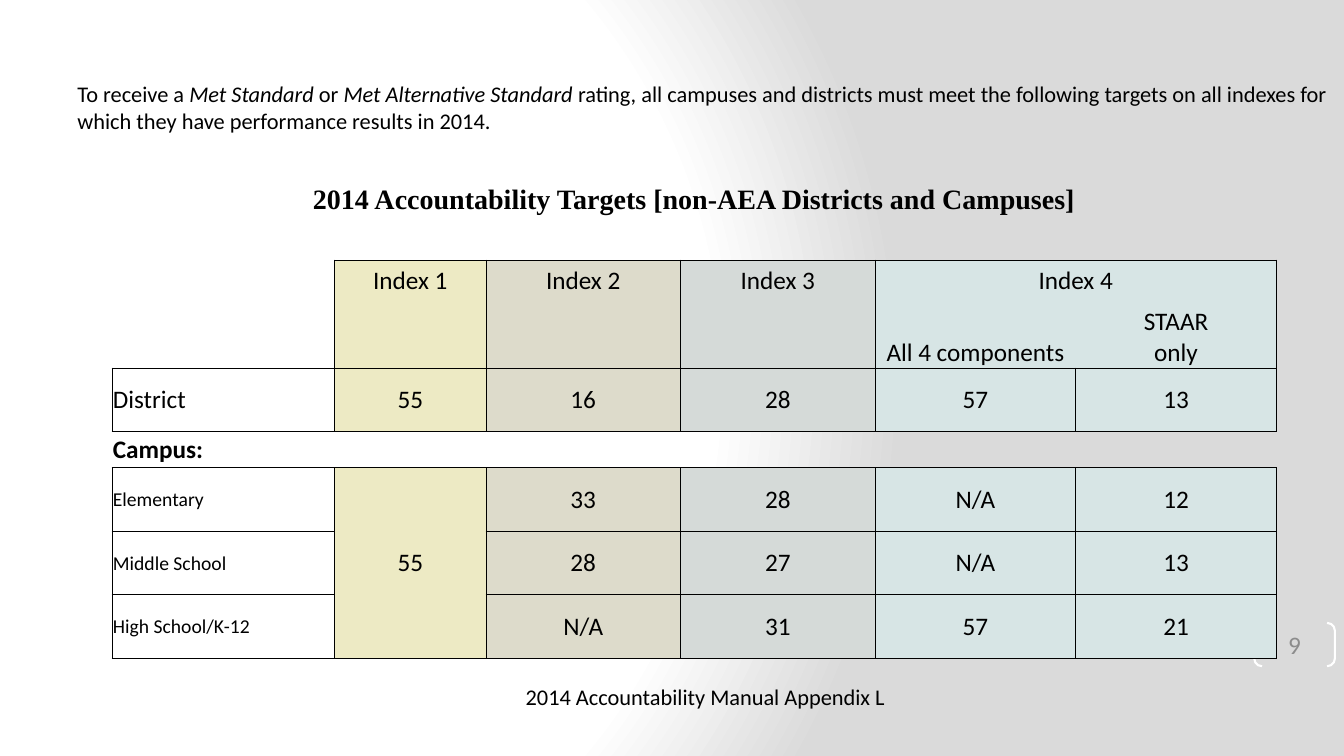
import pptx
import pptx.util
import pptx.oxml
import pptx.oxml.ns
import pptx.dml.color
import pptx.enum.text
import pptx.enum.shapes

Inches = pptx.util.Inches
RGBColor = pptx.dml.color.RGBColor
Align = pptx.enum.text.PP_ALIGN
Anchor = pptx.enum.text.MSO_ANCHOR

BLACK = RGBColor(0, 0, 0)
WHITE = RGBColor(255, 255, 255)
NUMBER_GRAY = RGBColor(0x8C, 0x8C, 0x8C)
SAND = RGBColor(0xED, 0xEA, 0xC4)
STONE = RGBColor(0xDD, 0xDB, 0xCB)
SILVER = RGBColor(0xD5, 0xDA, 0xD8)
MIST = RGBColor(0xD7, 0xE5, 0xE5)
COLUMN_FILLS = [None, SAND, STONE, SILVER, MIST, MIST]
DRAWING = pptx.oxml.ns.nsdecls("a")


def add_span(para, text, size=18, color=BLACK, **formats):
    span = para.add_run()
    span.text = text
    span.font.size = pptx.util.Pt(size)
    span.font.color.rgb = color
    for name, value in {"name": "Calibri", "bold": False, **formats}.items():
        setattr(span.font, name, value)


def add_border(cell, side, visible):
    paint = f'<a:solidFill><a:srgbClr val="{BLACK}"/></a:solidFill>' if visible else "<a:noFill/>"
    width = pptx.util.Pt(0.5)
    line = pptx.oxml.parse_xml(f'<a:ln{side} {DRAWING} w="{width}">{paint}</a:ln{side}>')
    cell._tc.get_or_add_tcPr().append(line)


deck = pptx.Presentation()
deck.slide_width = Inches(13.33)
deck.slide_height = Inches(7.5)
page = deck.slides.add_slide(deck.slide_layouts[6])

page.background.fill.solid()
background = page.element.find(".//" + pptx.oxml.ns.qn("p:bgPr"))
background.replace(background[0], pptx.oxml.parse_xml(f"""
<a:gradFill {DRAWING} rotWithShape="1"><a:gsLst>
<a:gs pos="0"><a:srgbClr val="FFFFFF"/></a:gs>
<a:gs pos="75000"><a:srgbClr val="FFFFFF"/></a:gs>
<a:gs pos="100000"><a:srgbClr val="DADADA"/></a:gs>
</a:gsLst><a:path path="circle">
<a:fillToRect l="20000" t="50000" r="100000" b="50000"/>
</a:path></a:gradFill>"""))

bracket = page.shapes.add_shape(
    pptx.enum.shapes.MSO_SHAPE.DOUBLE_BRACKET,
    Inches(12.44), Inches(6.18), Inches(0.8), Inches(0.43))
bracket.adjustments[0] = 0.18
bracket.shadow.inherit = False
bracket.fill.background()
bracket.line.color.rgb = WHITE
bracket.line.width = pptx.util.Pt(1.5)
frame = bracket.text_frame
for name, value in {"margin_left": 0, "margin_right": 0, "margin_top": 0,
                    "margin_bottom": 0, "vertical_anchor": Anchor.MIDDLE}.items():
    setattr(frame, name, value)
frame.paragraphs[0].alignment = Align.CENTER
add_span(frame.paragraphs[0], "9", color=NUMBER_GRAY)

intro = [
    ("To receive a ", False),
    ("Met Standard ", True),
    ("or ", False),
    ("Met Alternative Standard ", True),
    ("rating, all campuses and districts must meet the following targets on all "
     "indexes for which they have performance results in 2014.", False),
]
source_note = [("2014 Accountability Manual Appendix L", False)]
for left, top, width, height, alignment, spans in [
    (0.67, 0.75, 12.64, 0.64, Align.LEFT, intro),
    (2.12, 6.73, 9.75, 0.37, Align.CENTER, source_note),
]:
    box = page.shapes.add_textbox(Inches(left), Inches(top), Inches(width), Inches(height))
    box.text_frame.word_wrap = True
    para = box.text_frame.paragraphs[0]
    para.alignment = alignment
    for text, italic in spans:
        add_span(para, text, 16, italic=italic)

column_widths = [2.21, 1.5, 1.93, 1.93, 1.99, 1.99]
row_heights = [0.48, 0.44, 0.36, 0.71, 0.63, 0.36, 0.63, 0.63, 0.63, 0.36]
cell_texts = [
    ["2014 Accountability Targets [non-AEA Districts and Campuses]", "", "", "", "", ""],
    [""] * 6,
    ["", "Index 1", "Index 2", "Index 3", "Index 4", ""],
    ["", "", "", "", "All 4 components", "STAAR\nonly"],
    ["District", "55", "16", "28", "57", "13"],
    ["Campus:", "", "", "", "", ""],
    ["Elementary", "55", "33", "28", "N/A", "12"],
    ["Middle School", "", "28", "27", "N/A", "13"],
    ["High School/K-12", "", "N/A", "31", "57", "21"],
    [""] * 6,
]
boxed = ["LRTB"] * 6
cell_edges = [
    [""] * 6,
    [""] + ["B"] * 5,
    ["R"] + ["LRT"] * 5,
    ["RB", "LRB", "LRB", "LRB", "LB", "RB"],
    boxed,
    ["TB"] * 6,
    boxed,
    boxed,
    boxed,
    ["T"] * 6,
]
filled_rows = {2, 3, 4, 6, 7, 8}
school_rows = {6, 7, 8}

targets = page.shapes.add_table(
    len(row_heights), len(column_widths), Inches(1.11), Inches(1.66),
    Inches(sum(column_widths)), Inches(sum(row_heights))).table
targets.first_row = False
targets.horz_banding = False
for column, width in zip(targets.columns, column_widths):
    column.width = Inches(width)
for row, height in zip(targets.rows, row_heights):
    row.height = Inches(height)

for first, last in [((0, 0), (0, 5)), ((2, 4), (2, 5)), ((6, 1), (8, 1)), ((9, 2), (9, 4))]:
    targets.cell(*first).merge(targets.cell(*last))

for r, texts in enumerate(cell_texts):
    for c, text in enumerate(texts):
        cell = targets.cell(r, c)
        margin = Inches(0.01)
        for name, value in {"margin_left": margin, "margin_right": margin,
                            "margin_top": margin, "margin_bottom": 0,
                            "vertical_anchor": Anchor.BOTTOM if r < 4 else Anchor.MIDDLE}.items():
            setattr(cell, name, value)
        for side in "LRTB":
            add_border(cell, side, side in cell_edges[r][c])
        if c > 0 and r in filled_rows:
            cell.fill.solid()
            cell.fill.fore_color.rgb = COLUMN_FILLS[c]
        else:
            cell.fill.background()
        if not text:
            continue
        formats = {"size": 14 if c == 0 and r in school_rows else 18, "bold": r == 5}
        if r == 0:
            formats = {"size": 20, "bold": True, "name": "Times New Roman"}
        for i, line_text in enumerate(text.split("\n")):
            para = cell.text_frame.add_paragraph() if i else cell.text_frame.paragraphs[0]
            para.alignment = Align.CENTER if c > 0 or r == 0 else Align.LEFT
            add_span(para, line_text, **formats)

deck.save("out.pptx")
